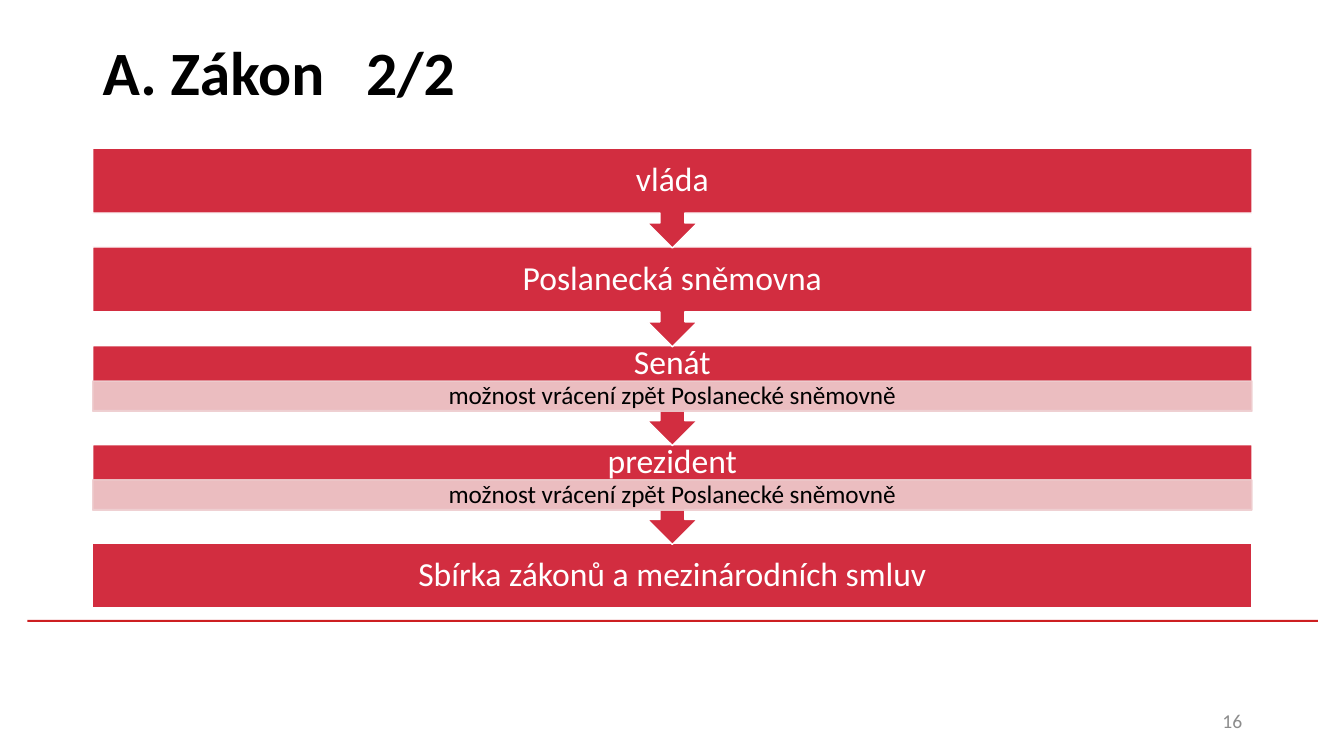
from dataclasses import dataclass

from lxml import etree
from pptx import Presentation
from pptx import util as u
from pptx.dml.color import RGBColor
from pptx.enum import shapes, text
from pptx.oxml.ns import qn

SLIDE_W, SLIDE_H = u.Inches(13.33), u.Inches(7.5)
COLORS = {
    "step": "D22D40",
    "note": "EECDCF",
    "rule": "CD1F21",
    "number": "8C8C8C",
    "black": "000000",
    "white": "FFFFFF",
}
LEFT, WIDTH = 6.9, 86.25
FIRST_TOP, PITCH = 19.6, 13.07
CALLOUT_H, BODY_H, HEADING_H, NOTE_H = 13.2, 8.53, 4.67, 4.0


@dataclass(frozen=True)
class Area:
    left: float
    top: float
    width: float
    height: float

    def emu(self) -> tuple[int, int, int, int]:
        return (int(SLIDE_W * self.left / 100), int(SLIDE_H * self.top / 100),
                int(SLIDE_W * self.width / 100), int(SLIDE_H * self.height / 100))


@dataclass(frozen=True)
class Style:
    size: int
    color: str
    align: text.PP_ALIGN = text.PP_ALIGN.CENTER
    bold: bool = False
    spacing: float = 0.9
    inset_x: float = 0.1
    inset_y: float = 0.05


@dataclass(frozen=True)
class Step:
    name: str
    note: str = ""


TITLE = Style(44, "black", text.PP_ALIGN.LEFT, bold=True)
NUMBER = Style(14, "number", text.PP_ALIGN.RIGHT, spacing=1.0)
STEP = Style(24, "white", inset_x=0.19, inset_y=0.19)
NOTE = Style(18, "black", inset_x=0.14, inset_y=0.03)

RETURN_NOTE = "možnost vrácení zpět Poslanecké sněmovně"
STEPS = [
    Step("vláda"),
    Step("Poslanecká sněmovna"),
    Step("Senát", RETURN_NOTE),
    Step("prezident", RETURN_NOTE),
    Step("Sbírka zákonů a mezinárodních smluv"),
]


def rgb(color: str) -> RGBColor:
    return RGBColor.from_string(COLORS[color])


def draw_block(slide, kind: shapes.MSO_SHAPE, area: Area, fill: str,
               line: str = "", opacity: int = 100):
    block = slide.shapes.add_shape(kind, *area.emu())
    block.shadow.inherit = False
    block.fill.solid()
    block.fill.fore_color.rgb = rgb(fill)
    if line:
        block.line.color.rgb = rgb(line)
        block.line.width = u.Pt(1)
    else:
        block.line.fill.background()
    if opacity < 100:
        for tint in block._element.spPr.iter(qn("a:srgbClr")):
            etree.SubElement(tint, qn("a:alpha"), val=str(opacity * 1000))
    return block


def write(slide, area: Area, words: str, style: Style, tab: float = 0):
    frame = slide.shapes.add_textbox(*area.emu()).text_frame
    frame.word_wrap = True
    frame.vertical_anchor = text.MSO_ANCHOR.MIDDLE
    frame.margin_left = frame.margin_right = u.Inches(style.inset_x)
    frame.margin_top = frame.margin_bottom = u.Inches(style.inset_y)
    line = frame.paragraphs[0]
    line.alignment = style.align
    line.line_spacing = style.spacing
    if tab:
        stops = etree.SubElement(line._p.get_or_add_pPr(), qn("a:tabLst"))
        etree.SubElement(stops, qn("a:tab"), pos=str(int(SLIDE_W * tab / 100)), algn="l")
    run = line.add_run()
    run.text = words
    run.font.name = "Calibri"
    run.font.size = u.Pt(style.size)
    run.font.bold = style.bold
    run.font.color.rgb = rgb(style.color)


def draw_step(slide, index: int, step: Step) -> None:
    top = FIRST_TOP + index * PITCH
    if index == len(STEPS) - 1:
        draw_block(slide, shapes.MSO_SHAPE.RECTANGLE,
                   Area(LEFT, top, WIDTH, BODY_H), "step", "white")
    else:
        callout = draw_block(slide, shapes.MSO_SHAPE.UP_ARROW_CALLOUT,
                             Area(LEFT, top, WIDTH, CALLOUT_H), "step", "white")
        callout.rotation = 180
    heading_h = HEADING_H if step.note else BODY_H
    write(slide, Area(LEFT, top, WIDTH, heading_h), step.name, STEP)
    if step.note:
        note_area = Area(LEFT, top + HEADING_H, WIDTH, NOTE_H)
        draw_block(slide, shapes.MSO_SHAPE.RECTANGLE, note_area, "note", "note", 90)
        write(slide, note_area, step.note, NOTE)


def main() -> None:
    deck = Presentation()
    deck.slide_width, deck.slide_height = SLIDE_W, SLIDE_H
    slide = deck.slides.add_slide(deck.slide_layouts[6])
    draw_block(slide, shapes.MSO_SHAPE.RECTANGLE, Area(2.03, 82, 96.02, 0.27), "rule")
    write(slide, Area(LEFT, 0.27, WIDTH, 19.33), "A. Zákon\t2/2", TITLE, tab=19.6)
    write(slide, Area(70.67, 92.67, 22.5, 5.33), "16", NUMBER)
    for index, step in reversed(list(enumerate(STEPS))):
        draw_step(slide, index, step)
    deck.save("out.pptx")


if __name__ == "__main__":
    main()
